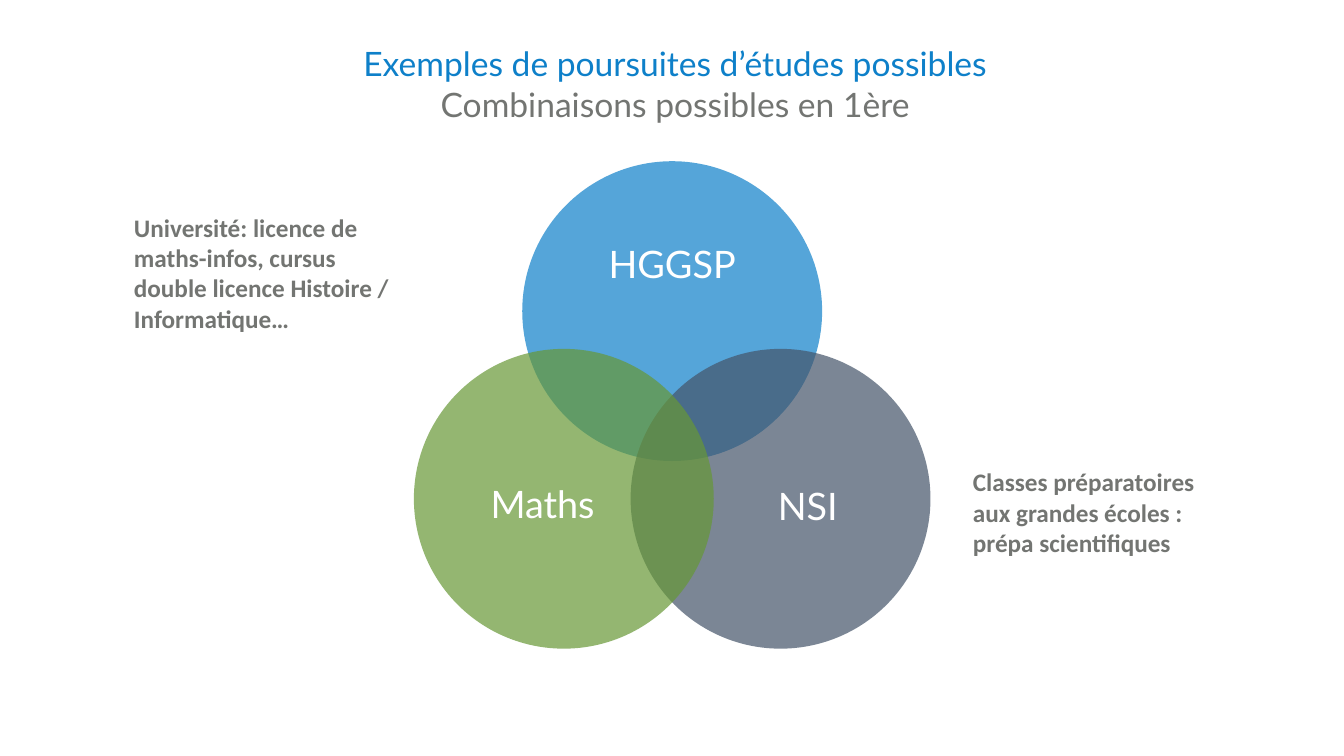
from dataclasses import dataclass
from math import sqrt

from lxml.etree import SubElement
from pptx import Presentation
from pptx.dml.color import RGBColor
from pptx.enum.shapes import MSO_SHAPE
from pptx.enum.text import MSO_ANCHOR, MSO_AUTO_SIZE, PP_ALIGN
from pptx.oxml.ns import qn
from pptx.util import Cm, Pt


@dataclass(frozen=True)
class Theme:
    blue: str = "0E80C9"
    slate: str = "445469"
    green: str = "679836"
    grey: str = "737572"
    white: str = "FFFFFF"
    heading_font: str = "Lato"
    note_font: str = "Calibri"
    heading_size: int = 48
    label_size: int = 54
    note_size: int = 36
    circle_opacity: int = 70


class VennSlide:
    def __init__(self, slide, theme):
        self.slide = slide
        self.theme = theme

    def set_text(self, frame, text, font, size, colors, align, bold=False):
        """Fill a frame, giving each line of text its own colour."""
        frame.text = text
        frame.word_wrap = True
        frame.auto_size = MSO_AUTO_SIZE.NONE
        frame.vertical_anchor = MSO_ANCHOR.TOP
        for paragraph, color in zip(frame.paragraphs, colors):
            paragraph.alignment = align
            for run in paragraph.runs:
                run.font.name = font
                run.font.size = Pt(size)
                run.font.bold = bold
                run.font.color.rgb = RGBColor.from_string(color)

    def title(self, text, left, top, width, height):
        heading = self.slide.shapes.title
        heading.left, heading.top = Cm(left), Cm(top)
        heading.width, heading.height = Cm(width), Cm(height)
        theme = self.theme
        self.set_text(heading.text_frame, text, theme.heading_font, theme.heading_size,
                      (theme.blue, theme.grey), PP_ALIGN.CENTER)

    def circle(self, center_x, center_y, diameter, color):
        disc = self.slide.shapes.add_shape(
            MSO_SHAPE.OVAL, Cm(center_x - diameter / 2), Cm(center_y - diameter / 2),
            Cm(diameter), Cm(diameter))
        disc.shadow.inherit = False
        disc.line.fill.background()
        disc.fill.solid()
        disc.fill.fore_color.rgb = RGBColor.from_string(color)
        rgb = disc.element.spPr.find(f"{qn('a:solidFill')}/{qn('a:srgbClr')}")
        SubElement(rgb, qn("a:alpha")).set("val", str(self.theme.circle_opacity * 1000))

    def label(self, text, center_x, center_y, width=8, height=2.57):
        box = self.slide.shapes.add_textbox(
            Cm(center_x - width / 2), Cm(center_y - height / 2), Cm(width), Cm(height))
        theme = self.theme
        self.set_text(box.text_frame, text, theme.heading_font, theme.label_size,
                      (theme.white,), PP_ALIGN.CENTER)

    def note(self, text, left, top, width, height):
        box = self.slide.shapes.add_textbox(Cm(left), Cm(top), Cm(width), Cm(height))
        theme = self.theme
        self.set_text(box.text_frame, text, theme.note_font, theme.note_size,
                      (theme.grey,), PP_ALIGN.LEFT, bold=True)


def main():
    deck = Presentation()
    deck.slide_width, deck.slide_height = Cm(67.72), Cm(38.1)
    theme = Theme()
    venn = VennSlide(deck.slides.add_slide(deck.slide_layouts[5]), theme)

    venn.title("Exemples de poursuites d’études possibles\nCombinaisons possibles en 1ère",
               17.37, 2.06, 33.3, 4.37)

    # The circle centres form an equilateral triangle.
    diameter, side = 15.11, 10.92
    apex_x, apex_y = 33.87, 15.68
    base_y = apex_y + side * sqrt(3) / 2
    subjects = [
        ("HGGSP", apex_x, apex_y, theme.blue, 0, -2.38),
        ("NSI", apex_x + side / 2, base_y, theme.slate, 1.37, 0.33),
        ("Maths", apex_x - side / 2, base_y, theme.green, -1.07, 0.26),
    ]
    for _, x, y, color, _, _ in subjects:
        venn.circle(x, y, diameter, color)
    for subject, x, y, _, shift_x, shift_y in subjects:
        venn.label(subject, x + shift_x, y + shift_y)

    venn.note("Université: licence de maths-infos, cursus double licence Histoire / Informatique…",
              6.5, 10.57, 14.38, 6.4)
    venn.note("Classes préparatoires aux grandes écoles : prépa scientifiques",
              48.77, 23.39, 12.57, 4.88)

    deck.save("out.pptx")


if __name__ == "__main__":
    main()
